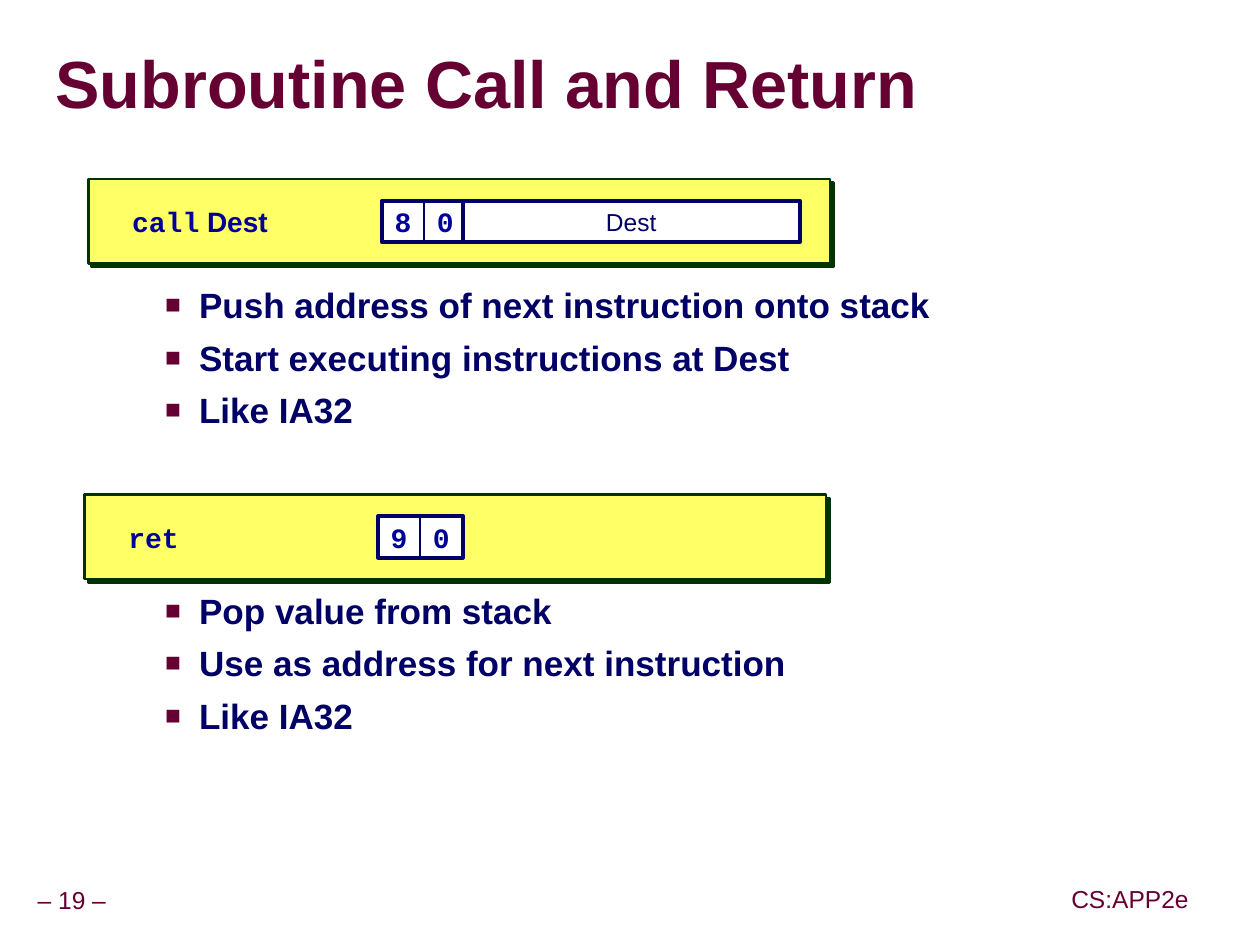
from lxml.etree import SubElement
from pptx import Presentation
from pptx.dml.color import RGBColor
from pptx.enum.shapes import MSO_SHAPE as Preset
from pptx.enum.text import MSO_ANCHOR as Anchor, PP_ALIGN as Align
from pptx.oxml.ns import qn
from pptx.util import Inches, Pt

COLORS = {
    "maroon": "660033",
    "navy": "000066",
    "code": "000099",
    "panel": "FFFF66",
    "edge": "003300",
    "cell": "FFFFFF",
    "title_shadow": "969696",
}
CELL = 0.33
CELL_PITCH = 0.335
ENCODING_LEFT = 2.33


def color(name):
    return RGBColor.from_string(COLORS[name])


def fill_shadow(effects, name):
    shadow = SubElement(effects, qn("a:outerShdw"), dist=str(Pt(2.8)),
                        dir="2700000", algn="ctr", rotWithShape="0")
    SubElement(shadow, qn("a:srgbClr"), val=COLORS[name])


def shadow_text(run, name):
    fill = run.font._element.find(qn("a:solidFill"))
    effects = SubElement(run.font._element, qn("a:effectLst"))
    fill.addnext(effects)
    fill_shadow(effects, name)


def write(frame, *runs, size=16, ink="code", bold=True, align=Align.LEFT,
          anchor=Anchor.MIDDLE, inset=(0, 0), spacing=None, wrap=True):
    frame.word_wrap = wrap
    frame.vertical_anchor = anchor
    frame.margin_left = frame.margin_right = Inches(inset[0])
    frame.margin_top = frame.margin_bottom = Inches(inset[1])
    paragraph = frame.paragraphs[0]
    paragraph.alignment = align
    paragraph.line_spacing = spacing
    for text, font in runs:
        run = paragraph.add_run()
        run.text = text
        run.font.name = font
        run.font.size = Pt(size)
        run.font.bold = bold
        run.font.color.rgb = color(ink)
    return paragraph


def add_text(slide, box, *runs, **style):
    shape = slide.shapes.add_textbox(*map(Inches, box))
    return write(shape.text_frame, *runs, **style)


def add_rect(slide, box, fill, line, width):
    shape = slide.shapes.add_shape(Preset.RECTANGLE, *map(Inches, box))
    shape.shadow.inherit = False
    if fill:
        shape.fill.solid()
        shape.fill.fore_color.rgb = color(fill)
    else:
        shape.fill.background()
    shape.line.color.rgb = color(line)
    shape.line.width = Pt(width)
    return shape


def add_title(slide, box, text):
    paragraph = add_text(slide, box, (text, "Arial"), size=38, ink="maroon",
                         spacing=0.87)
    shadow_text(paragraph.runs[0], "title_shadow")


def add_footer(slide, box, text):
    add_text(slide, box, (text, "Arial"), size=14, ink="maroon", bold=False,
             align=Align.CENTER, inset=(0.05, 0.05), spacing=0.9, wrap=False)


def add_instruction(slide, box, syntax, digits, operand=None):
    left, top, width, height = box
    panel = add_rect(slide, box, "panel", "edge", 1.5)
    fill_shadow(panel._element.spPr.find(qn("a:effectLst")), "edge")
    row = top + (height - CELL) / 2
    start = left + ENCODING_LEFT
    add_text(slide, (left + 0.25, row, 2.08, CELL), *syntax, inset=(0.1, 0.05))
    for index, digit in enumerate(digits):
        cell = add_rect(slide, (start + index * CELL_PITCH, row, CELL, CELL),
                        "cell", "navy", 0.5)
        write(cell.text_frame, (digit, "Courier New"), align=Align.CENTER)
    add_rect(slide, (start, row, CELL_PITCH * len(digits), CELL),
             None, "navy", 2.25)
    if operand:
        field = add_rect(slide, (start + 0.64, row, 2.67, CELL),
                         "cell", "navy", 2.25)
        write(field.text_frame, (operand, "Arial"), size=14, ink="navy",
              bold=False, align=Align.CENTER)


def add_bullets(slide, box, items):
    left, top, width, height = box
    step = height / len(items)
    frame = slide.shapes.add_textbox(*map(Inches, box)).text_frame
    frame.word_wrap = True
    frame.margin_top = frame.margin_bottom = Inches(0.05)
    for index, item in enumerate(items):
        paragraph = frame.add_paragraph() if index else frame.paragraphs[0]
        paragraph.space_after = Pt(6)
        run = paragraph.add_run()
        run.text = item
        run.font.name = "Arial"
        run.font.size = Pt(20)
        run.font.bold = True
        run.font.color.rgb = color("navy")
        properties = paragraph._element.get_or_add_pPr()
        properties.set("marL", str(Inches(0.81)))
        properties.set("indent", str(Inches(-0.27)))
        bullet_color = SubElement(properties, qn("a:buClr"))
        SubElement(bullet_color, qn("a:srgbClr"), val=COLORS["maroon"])
        SubElement(properties, qn("a:buSzPct"), val="75000")
        SubElement(properties, qn("a:buFont"), typeface="Arial")
        SubElement(properties, qn("a:buChar"), char="■")


def main():
    presentation = Presentation()
    presentation.slide_width = Inches(9.99)
    presentation.slide_height = Inches(7.49)
    slide = presentation.slides.add_slide(presentation.slide_layouts[6])

    add_footer(slide, (0.24, 6.99, 0.66, 0.31), "– 19 –")
    add_footer(slide, (8.44, 6.98, 1.04, 0.31), "CS:APP2e")
    add_title(slide, (0.44, 0.27, 9.52, 0.85), "Subroutine Call and Return")

    add_instruction(slide, (0.7, 1.42, 5.88, 0.67),
                    [("call", "Courier New"), (" Dest", "Arial")], "80", "Dest")
    add_bullets(slide, (0.67, 2.2, 8.42, 1.3), [
        "Push address of next instruction onto stack",
        "Start executing instructions at Dest",
        "Like IA32",
    ])
    add_instruction(slide, (0.67, 3.92, 5.88, 0.67),
                    [("ret", "Courier New")], "90")
    add_bullets(slide, (0.67, 4.62, 8.42, 1.3), [
        "Pop value from stack",
        "Use as address for next instruction",
        "Like IA32",
    ])
    presentation.save("out.pptx")


if __name__ == "__main__":
    main()
